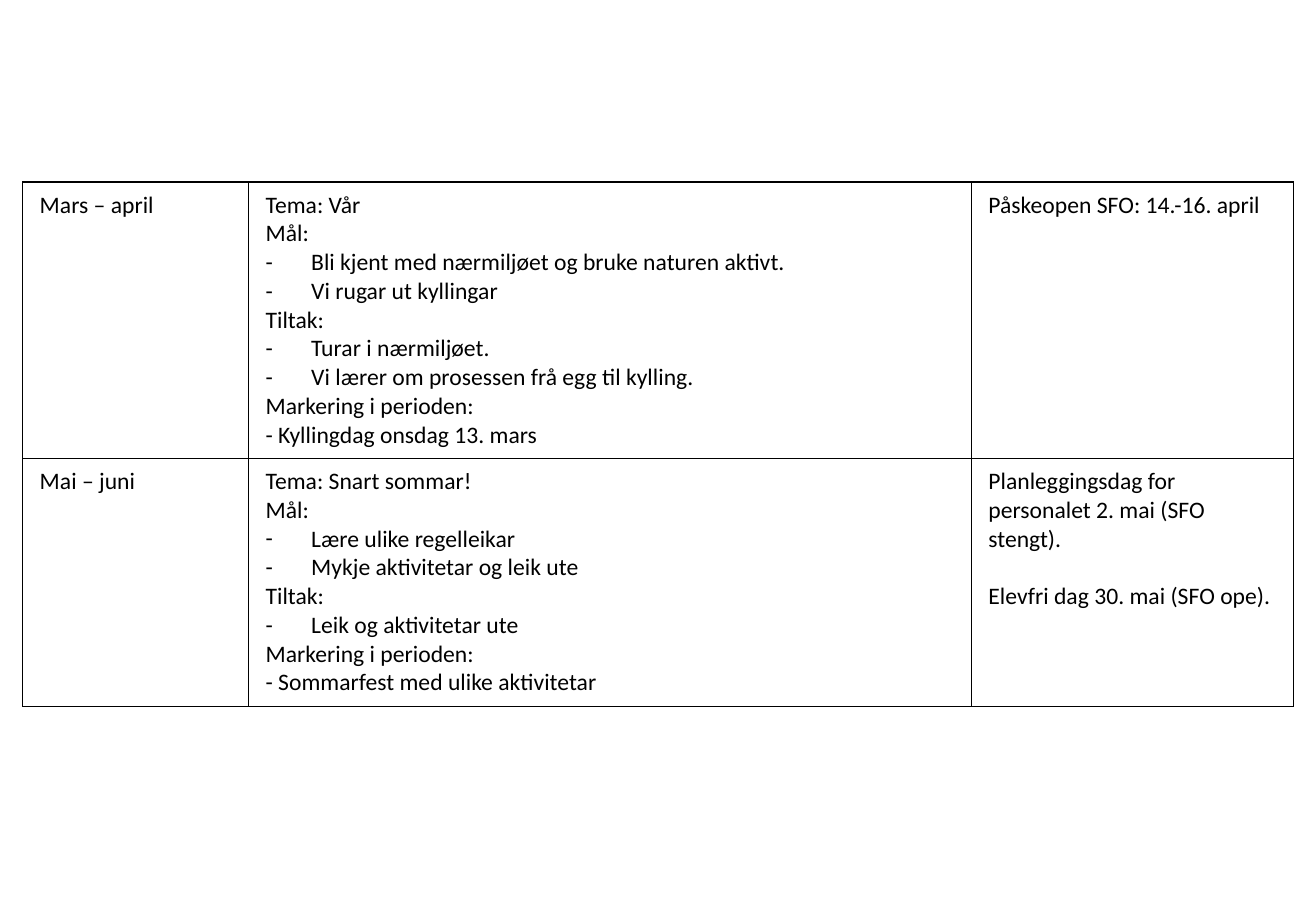
from lxml.etree import SubElement
from pptx import Presentation
from pptx.dml.color import RGBColor
from pptx.oxml.ns import qn
from pptx.util import Pt

BLACK = "000000"
LINE_HEIGHT = 17.09
COLUMN_SHARES = (133.9, 428.4, 190.8)
TEXT_FORMAT = {"name": "Calibri", "size": Pt(14), "bold": False}
CELL_FORMAT = {
    "margin_left": Pt(10.08), "margin_right": Pt(10.08),
    "margin_top": Pt(5.04), "margin_bottom": Pt(5.04),
}
PLAIN_TABLE = {"first_row": False, "horz_banding": False}

PERIODS = [
    {
        "months": "Mars – april",
        "theme": "Tema: Vår",
        "goals": ["Bli kjent med nærmiljøet og bruke naturen aktivt.",
                  "Vi rugar ut kyllingar"],
        "measures": ["Turar i nærmiljøet.",
                     "Vi lærer om prosessen frå egg til kylling."],
        "event": "- Kyllingdag onsdag 13. mars",
        "notices": ["Påskeopen SFO: 14.-16. april"],
    },
    {
        "months": "Mai – juni",
        "theme": "Tema: Snart sommar!",
        "goals": ["Lære ulike regelleikar", "Mykje aktivitetar og leik ute"],
        "measures": ["Leik og aktivitetar ute"],
        "event": "- Sommarfest med ulike aktivitetar",
        "notices": ["Planleggingsdag for personalet 2. mai (SFO stengt).",
                    "Elevfri dag 30. mai (SFO ope)."],
    },
]


def colour(hex_value):
    """Turn a hex string into a colour."""
    return RGBColor.from_string(hex_value)


def apply_format(target, values):
    """Set every attribute in values on target."""
    for attribute, value in values.items():
        setattr(target, attribute, value)


def plan_lines(period):
    """List the plan of a period as pairs of text and whether it is bulleted."""
    return [
        (period["theme"], False),
        ("Mål:", False),
        *((goal, True) for goal in period["goals"]),
        ("Tiltak:", False),
        *((measure, True) for measure in period["measures"]),
        ("Markering i perioden:", False),
        (period["event"], False),
    ]


def add_dash(paragraph):
    """Give a paragraph a hanging dash bullet."""
    properties = paragraph._p.get_or_add_pPr()
    properties.set("marL", str(Pt(27)))
    properties.set("indent", str(-Pt(27)))
    SubElement(properties, qn("a:buFont"), typeface="Calibri")
    SubElement(properties, qn("a:buChar"), char="-")


def add_borders(cell):
    """Draw a thin black line on all sides of a cell."""
    properties = cell._tc.get_or_add_tcPr()
    for side in ("lnL", "lnR", "lnT", "lnB"):
        border = SubElement(properties, qn(f"a:{side}"), w=str(Pt(1)))
        fill = SubElement(border, qn("a:solidFill"))
        SubElement(fill, qn("a:srgbClr"), val=BLACK)


def fill_cell(cell, lines, gap=0):
    """Write lines into a bordered cell, with a gap between paragraphs."""
    apply_format(cell, CELL_FORMAT)
    add_borders(cell)
    cell.fill.background()
    frame = cell.text_frame
    for index, (text, bulleted) in enumerate(lines):
        paragraph = frame.add_paragraph() if index else frame.paragraphs[0]
        paragraph.space_before = Pt(gap if index else 0)
        if bulleted:
            add_dash(paragraph)
        run = paragraph.add_run()
        run.text = text
        apply_format(run.font, TEXT_FORMAT)
        run.font.color.rgb = colour(BLACK)


def add_period_table(slide, left, top, width, height):
    """Place the table of periods, plans and notices in the given box."""
    table = slide.shapes.add_table(
        len(PERIODS), len(COLUMN_SHARES),
        Pt(left), Pt(top), Pt(width), Pt(height)).table
    apply_format(table, PLAIN_TABLE)
    for column, share in zip(table.columns, COLUMN_SHARES):
        column.width = Pt(width * share / sum(COLUMN_SHARES))
    for row, period in zip(table.rows, PERIODS):
        months, plan, notices = row.cells
        lines = plan_lines(period)
        row.height = Pt(len(lines) * LINE_HEIGHT + 10.08)
        fill_cell(months, [(period["months"], False)])
        fill_cell(plan, lines)
        fill_cell(notices, [(notice, False) for notice in period["notices"]],
                  gap=LINE_HEIGHT)


def main():
    """Build the slide and save it."""
    deck = Presentation()
    apply_format(deck, {"slide_width": Pt(780), "slide_height": Pt(540)})
    slide = deck.slides.add_slide(deck.slide_layouts[6])
    add_period_table(slide, 13.5, 108, 753.1, 310.7)
    deck.save("out.pptx")


if __name__ == "__main__":
    main()
